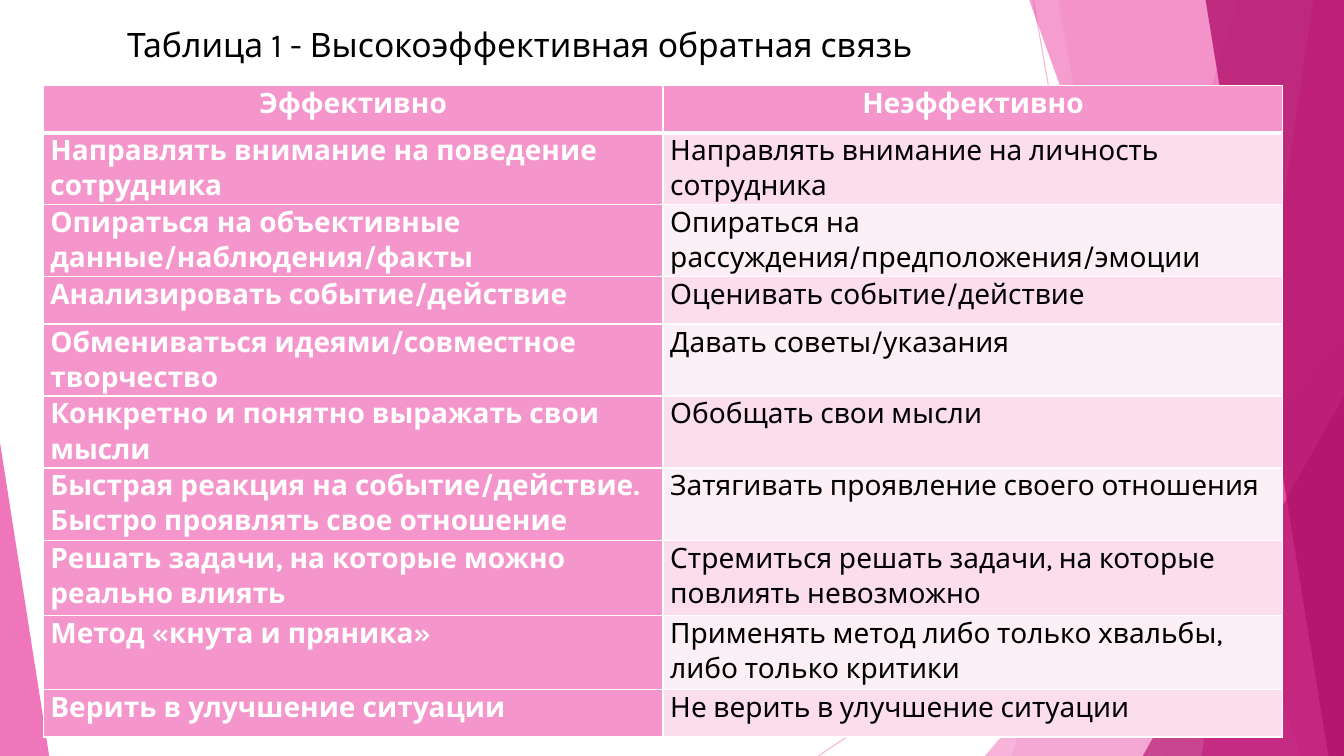
from dataclasses import dataclass
from lxml import etree
from pptx import Presentation
from pptx.dml.color import RGBColor
from pptx.enum.shapes import MSO_CONNECTOR, MSO_SHAPE
from pptx.enum.text import MSO_ANCHOR, MSO_AUTO_SIZE, PP_ALIGN
from pptx.oxml.ns import qn
from pptx.util import Cm, Pt

LINE, TRI = MSO_CONNECTOR.STRAIGHT, MSO_SHAPE.ISOSCELES_TRIANGLE
TOP, GROW = MSO_ANCHOR.TOP, MSO_AUTO_SIZE.SHAPE_TO_FIT_TEXT
LEFT, CENTER = PP_ALIGN.LEFT, PP_ALIGN.CENTER


@dataclass(frozen=True)
class Theme:
    font: str = "Karla"
    title: int = 24
    body: int = 20
    black: str = "000000"
    white: str = "FFFFFF"
    pink: str = "F496CB"
    rose: str = "EB3D9F"
    plum: str = "B2136D"
    odd: str = "FBDDEC"
    even: str = "FDEFF6"


T = Theme()

# Content
TITLE = "Таблица 1 - Высокоэффективная обратная связь"
ROWS = [
    ("Эффективно", "Неэффективно"),
    ("Направлять внимание на поведение сотрудника",
     "Направлять внимание на личность сотрудника"),
    ("Опираться на объективные данные/наблюдения/факты",
     "Опираться на рассуждения/предположения/эмоции"),
    ("Анализировать событие/действие", "Оценивать событие/действие"),
    ("Обмениваться идеями/совместное творчество", "Давать советы/указания"),
    ("Конкретно и понятно выражать свои мысли", "Обобщать свои мысли"),
    ("Быстрая реакция на событие/действие. Быстро проявлять свое отношение",
     "Затягивать проявление своего отношения"),
    ("Решать задачи, на которые можно реально влиять",
     "Стремиться решать задачи, на которые повлиять невозможно"),
    ("Метод «кнута и пряника»",
     "Применять метод либо только хвальбы, либо только критики"),
    ("Верить в улучшение ситуации", "Не верить в улучшение ситуации"),
]

# Layout, in centimetres
WIDE, HIGH = 33.87, 19.05
COL, ROW = 15.62, 1.19
TALL = {6: 1.83, 7: 1.88, 8: 1.88}
RAYS = [(26.04, 0, 29.41, HIGH), (WIDE, 10.24, 20.62, HIGH)]
# Facets run to the right edge: a band has top x and bottom x,
# a triangle has left, top, width and apex
FACETS = [
    ("band", (31.19, 25.5), T.pink, 36),
    ("band", (26.67, 30.05), T.pink, 20),
    ("tri", (24.82, 8.46, 9.05, 1), T.pink, 72),
    ("band", (25.93, 32.79), T.rose, 50),
    ("band", (33.1, 30.28), T.rose, 70),
    ("band", (30.38, 33.48), T.plum, 80),
    ("tri", (28.8, 9.98, 5.07, 1), T.plum, 66),
    ("tri", (0, 11.15, 1.24, 0), T.rose, 70),
]


def rgb(code):
    return RGBColor.from_string(code)


def fade(node, alpha):
    for color in node.iter(qn("a:srgbClr")):
        etree.SubElement(color, qn("a:alpha"), val=str(alpha * 1000))


def ray(shapes, ends):
    line = shapes.add_connector(LINE, *map(Cm, ends))
    line.line.color.rgb = rgb(T.pink)
    line.line.width = Pt(0.75)
    props = line.element.spPr
    fade(props, 70)
    etree.SubElement(props, qn("a:effectLst"))


def facet(shapes, kind, place, color, alpha):
    if kind == "band":
        top, low = place
        pen = shapes.build_freeform(Cm(top), Cm(-0.02))
        pen.add_line_segments([(Cm(WIDE), Cm(-0.02)), (Cm(WIDE), Cm(HIGH)),
                               (Cm(low), Cm(HIGH))], close=True)
        shape = pen.convert_to_shape()
    else:
        x, y, w, apex = place
        shape = shapes.add_shape(TRI, Cm(x), Cm(y), Cm(w), Cm(HIGH - y))
        shape.adjustments[0] = apex
    shape.shadow.inherit = False
    shape.fill.solid()
    shape.fill.fore_color.rgb = rgb(color)
    fade(shape.element.spPr, alpha)
    shape.line.fill.background()


def style(para, size, color, bold, align):
    para.alignment = align
    font = para.font
    font.name, font.size, font.bold = T.font, Pt(size), bold
    font.color.rgb = rgb(color)


def edge(cell, side, width):
    line = etree.SubElement(cell._tc.get_or_add_tcPr(), qn("a:ln" + side),
                            w=str(Pt(width)))
    fill = etree.SubElement(line, qn("a:solidFill"))
    etree.SubElement(fill, qn("a:srgbClr"), val=T.white)


def fill_cell(cell, text, r, c):
    strong = r == 0 or c == 0
    for side in "LRTB":
        edge(cell, side, 3 if (r, side) in ((0, "B"), (1, "T")) else 1)
    cell.fill.solid()
    cell.fill.fore_color.rgb = rgb(T.pink if strong else T.odd if r % 2 else T.even)
    cell.margin_left = cell.margin_right = Cm(0.18)
    cell.margin_top = cell.margin_bottom = 0
    cell.text = text
    para = cell.text_frame.paragraphs[0]
    para.line_spacing = 1.07
    style(para, T.body, T.white if strong else T.black, strong,
          CENTER if r == 0 else LEFT)


def main():
    deck = Presentation()
    deck.slide_width, deck.slide_height = Cm(WIDE), Cm(HIGH)
    slide = deck.slides.add_slide(deck.slide_layouts[5])
    shapes = slide.shapes

    # Background facets
    for ends in RAYS:
        ray(shapes, ends)
    for item in FACETS:
        facet(shapes, *item)

    # Title
    title = shapes.title
    title.left, title.top, title.width, title.height = map(
        Cm, (2.95, 0.48, 21.72, 1.27))
    frame = title.text_frame
    frame.text = TITLE
    frame.word_wrap, frame.auto_size, frame.vertical_anchor = True, GROW, TOP
    style(frame.paragraphs[0], T.title, T.black, False, LEFT)

    # Table
    sizes = [TALL.get(r, ROW) for r in range(len(ROWS))]
    table = shapes.add_table(len(ROWS), 2, Cm(1.09), Cm(2.16),
                             Cm(2 * COL), Cm(sum(sizes))).table
    for col in table.columns:
        col.width = Cm(COL)
    for r, (pair, size) in enumerate(zip(ROWS, sizes)):
        table.rows[r].height = Cm(size)
        for c, text in enumerate(pair):
            fill_cell(table.cell(r, c), text, r, c)

    deck.save("out.pptx")


if __name__ == "__main__":
    main()
